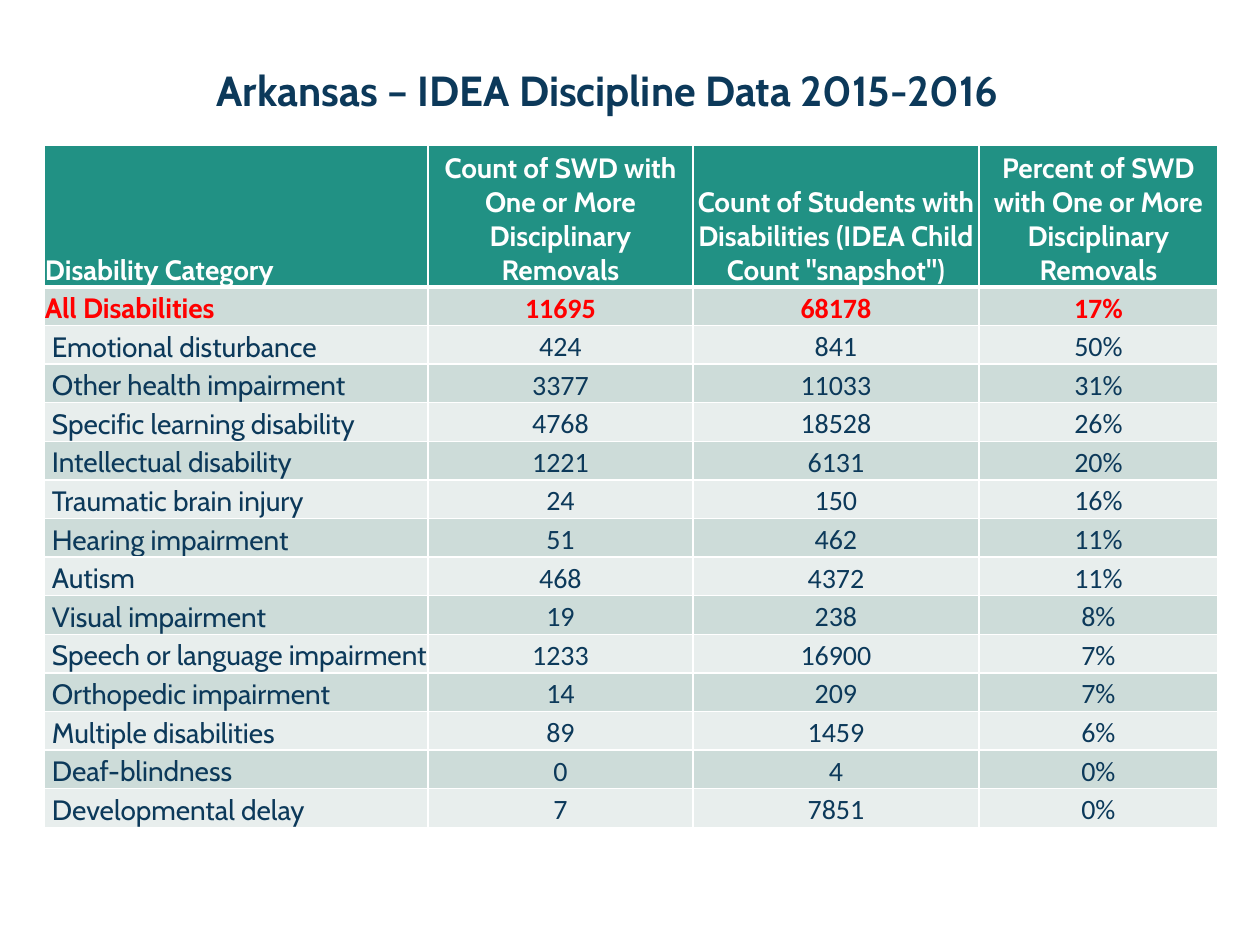
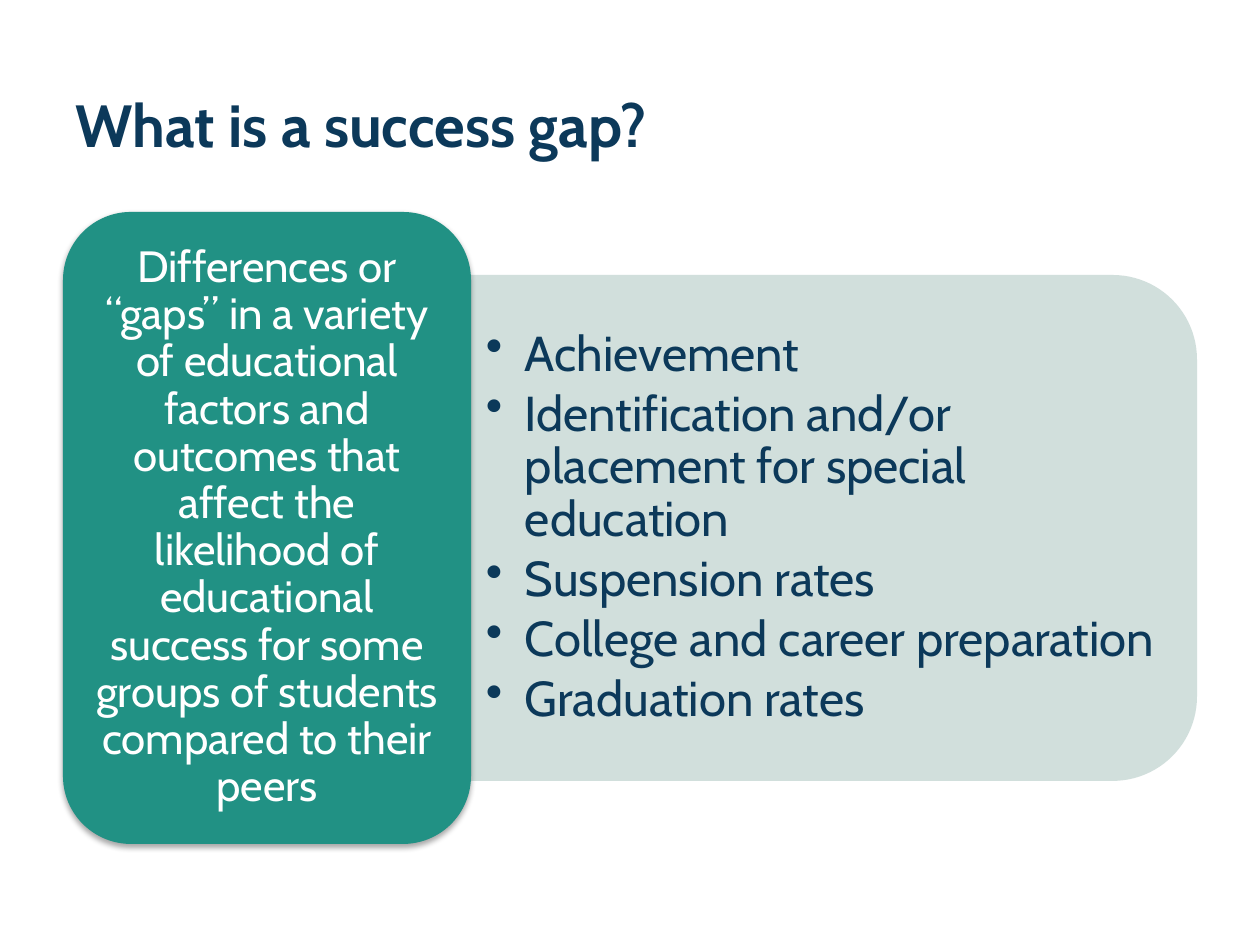
from lxml import etree
from pptx import Presentation
from pptx.dml.color import RGBColor
from pptx.enum.shapes import MSO_SHAPE
from pptx.enum.text import MSO_ANCHOR, MSO_AUTO_SIZE, PP_ALIGN
from pptx.oxml.ns import qn
from pptx.util import Pt

ROUNDED, ROUNDED_TOP = MSO_SHAPE.ROUNDED_RECTANGLE, MSO_SHAPE.ROUND_2_SAME_RECTANGLE
TOP, MIDDLE, BOTTOM = MSO_ANCHOR.TOP, MSO_ANCHOR.MIDDLE, MSO_ANCHOR.BOTTOM
LEFT, CENTER = PP_ALIGN.LEFT, PP_ALIGN.CENTER
NO_AUTOFIT = MSO_AUTO_SIZE.NONE

EMU_PER_PX = 914400 / 126
SLIDE_WIDTH, SLIDE_HEIGHT = 1260, 945
TITLE_ONLY = 5
HEADING_FONT, FIGURE_FONT = "Cabin", "Calibri"
COLORS = {
    "navy": "0C395A",
    "teal": "219184",
    "sage": "CDDCD9",
    "mist": "E8EEED",
    "red": "FF0000",
    "white": "FFFFFF",
    "black": "000000",
}

COLUMN_WIDTHS = [384, 265, 286, 239]
HEADER_HEIGHT = 142
HEADERS = [
    "Disability Category",
    "Count of SWD with One or More Disciplinary Removals",
    'Count of Students with Disabilities (IDEA Child Count "snapshot")',
    "Percent of SWD with One or More Disciplinary Removals",
]
DISABILITIES = [
    ("All Disabilities", "11695", "68178", "17%"),
    ("Emotional disturbance", "424", "841", "50%"),
    ("Other health impairment", "3377", "11033", "31%"),
    ("Specific learning disability", "4768", "18528", "26%"),
    ("Intellectual disability", "1221", "6131", "20%"),
    ("Traumatic brain injury", "24", "150", "16%"),
    ("Hearing impairment", "51", "462", "11%"),
    ("Autism", "468", "4372", "11%"),
    ("Visual impairment", "19", "238", "8%"),
    ("Speech or language impairment", "1233", "16900", "7%"),
    ("Orthopedic impairment", "14", "209", "7%"),
    ("Multiple disabilities", "89", "1459", "6%"),
    ("Deaf-blindness", "0", "4", "0%"),
    ("Developmental delay", "7", "7851", "0%"),
]

DEFINITION = (
    "Differences or “gaps” in a variety of educational factors and outcomes "
    "that affect the likelihood of educational success for some groups of "
    "students compared to their peers"
)
GAP_AREAS = [
    "Achievement",
    "Identification and/or placement for special education",
    "Suspension rates",
    "College and career preparation",
    "Graduation rates",
]


def px(length):
    return round(length * EMU_PER_PX)


def place(box):
    return [px(length) for length in box]


def rgb(color):
    return RGBColor.from_string(COLORS[color])


def add_xml(parent, tag, **attributes):
    return etree.SubElement(parent, qn(tag), {k: str(v) for k, v in attributes.items()})


def add_xml_color(parent, color, alpha=None):
    color_element = add_xml(parent, "a:srgbClr", val=COLORS[color])
    if alpha is not None:
        add_xml(color_element, "a:alpha", val=alpha * 1000)


def style_text(paragraph, size, color, bold=False, font=HEADING_FONT, align=LEFT):
    paragraph.alignment = align
    paragraph.font.name = font
    paragraph.font.size = Pt(size)
    paragraph.font.bold = bold
    paragraph.font.color.rgb = rgb(color)


def set_margins(holder, left, top, right, bottom):
    holder.margin_left, holder.margin_top = px(left), px(top)
    holder.margin_right, holder.margin_bottom = px(right), px(bottom)


def add_titled_slide(deck, title_text, box, size, anchor):
    slide = deck.slides.add_slide(deck.slide_layouts[TITLE_ONLY])
    title = slide.shapes.title
    title.left, title.top, title.width, title.height = place(box)
    frame = title.text_frame
    frame.text = title_text
    frame.word_wrap = True
    frame.auto_size = NO_AUTOFIT
    frame.vertical_anchor = anchor
    style_text(frame.paragraphs[0], size, "navy", bold=True)
    return slide


def add_cell_borders(cell, bottom_width):
    properties = cell._tc.get_or_add_tcPr()
    for side, width in (("L", 1), ("R", 1), ("T", 1), ("B", bottom_width)):
        border = add_xml(properties, f"a:ln{side}", w=Pt(width))
        add_xml_color(add_xml(border, "a:solidFill"), "white")


def fill_cell(cell, text, row, column):
    is_header, is_total = row == 0, row == 1
    is_figure = column > 0
    add_cell_borders(cell, 3 if is_header else 1)
    cell.fill.solid()
    cell.fill.fore_color.rgb = rgb("teal" if is_header else "sage" if row % 2 else "mist")
    cell.text = text
    cell.vertical_anchor = BOTTOM
    is_indented = row > 1 and not is_figure
    set_margins(cell, 8 if is_indented else 1, 1, 1, 0)
    style_text(
        cell.text_frame.paragraphs[0],
        16,
        "white" if is_header else "red" if is_total else "navy",
        bold=is_header or is_total,
        font=FIGURE_FONT if is_figure and not is_header else HEADING_FONT,
        align=CENTER if is_figure else LEFT,
    )


def add_discipline_table(slide, box):
    rows = [HEADERS, *DISABILITIES]
    table = slide.shapes.add_table(len(rows), len(HEADERS), *place(box)).table
    for column, width in zip(table.columns, COLUMN_WIDTHS):
        column.width = px(width)
    body_row_height = (box[3] - HEADER_HEIGHT) / len(DISABILITIES)
    for row, texts in enumerate(rows):
        table.rows[row].height = px(body_row_height if row else HEADER_HEIGHT)
        for column, text in enumerate(texts):
            fill_cell(table.cell(row, column), text, row, column)


def add_panel(slide, kind, box, color):
    panel = slide.shapes.add_shape(kind, *place(box))
    panel.shadow.inherit = False
    panel.fill.solid()
    panel.fill.fore_color.rgb = rgb(color)
    panel.line.fill.background()
    return panel


def add_gap_areas(slide, box):
    left, top, width, height = box
    turned_box = (left + (width - height) / 2, top + (height - width) / 2, height, width)
    backdrop = add_panel(slide, ROUNDED_TOP, turned_box, "sage")
    backdrop.rotation = 90
    fill_color = backdrop._element.spPr.find(qn("a:solidFill"))[0]
    add_xml(fill_color, "a:alpha", val=90000)

    areas_box = (left, top + 25, width - 25, height - 50)
    frame = slide.shapes.add_textbox(*place(areas_box)).text_frame
    frame.word_wrap = True
    frame.vertical_anchor = MIDDLE
    set_margins(frame, 15, 8, 15, 8)
    for index, area in enumerate(GAP_AREAS):
        paragraph = frame.add_paragraph() if index else frame.paragraphs[0]
        paragraph.text = area
        properties = paragraph._p.get_or_add_pPr()
        properties.set("marL", str(px(39)))
        properties.set("indent", str(px(-39)))
        add_xml(properties, "a:buChar", char="•")
        paragraph.line_spacing = 0.9
        paragraph.space_after = Pt(4)
        style_text(paragraph, 28, "navy")


def add_definition(slide, box):
    panel = add_panel(slide, ROUNDED, box, "teal")
    effects = panel._element.spPr.find(qn("a:effectLst"))
    shadow = add_xml(effects, "a:outerShdw", blurRad=Pt(3.1), dist=Pt(1.8),
                     dir=5400000, rotWithShape=0)
    add_xml_color(shadow, "black", alpha=35)
    frame = panel.text_frame
    frame.text = DEFINITION
    frame.word_wrap = True
    frame.vertical_anchor = MIDDLE
    set_margins(frame, 12, 6, 12, 6)
    frame.paragraphs[0].line_spacing = 0.9
    style_text(frame.paragraphs[0], 25, "white", align=CENTER)


def build_discipline_slide(deck):
    slide = add_titled_slide(deck, "Arkansas – IDEA Discipline Data 2015-2016",
                             (204, 58, 851, 87), 24, TOP)
    add_discipline_table(slide, (44, 145, sum(COLUMN_WIDTHS), 683))


def build_success_gap_slide(deck):
    slide = add_titled_slide(deck, "What is a success gap?", (63, 13, 1134, 153), 34, BOTTOM)
    add_gap_areas(slide, (471, 275, 726, 506))
    add_definition(slide, (63, 212, 408, 632))


def main():
    deck = Presentation()
    deck.slide_width, deck.slide_height = px(SLIDE_WIDTH), px(SLIDE_HEIGHT)
    build_discipline_slide(deck)
    build_success_gap_slide(deck)
    deck.save("out.pptx")


if __name__ == "__main__":
    main()
